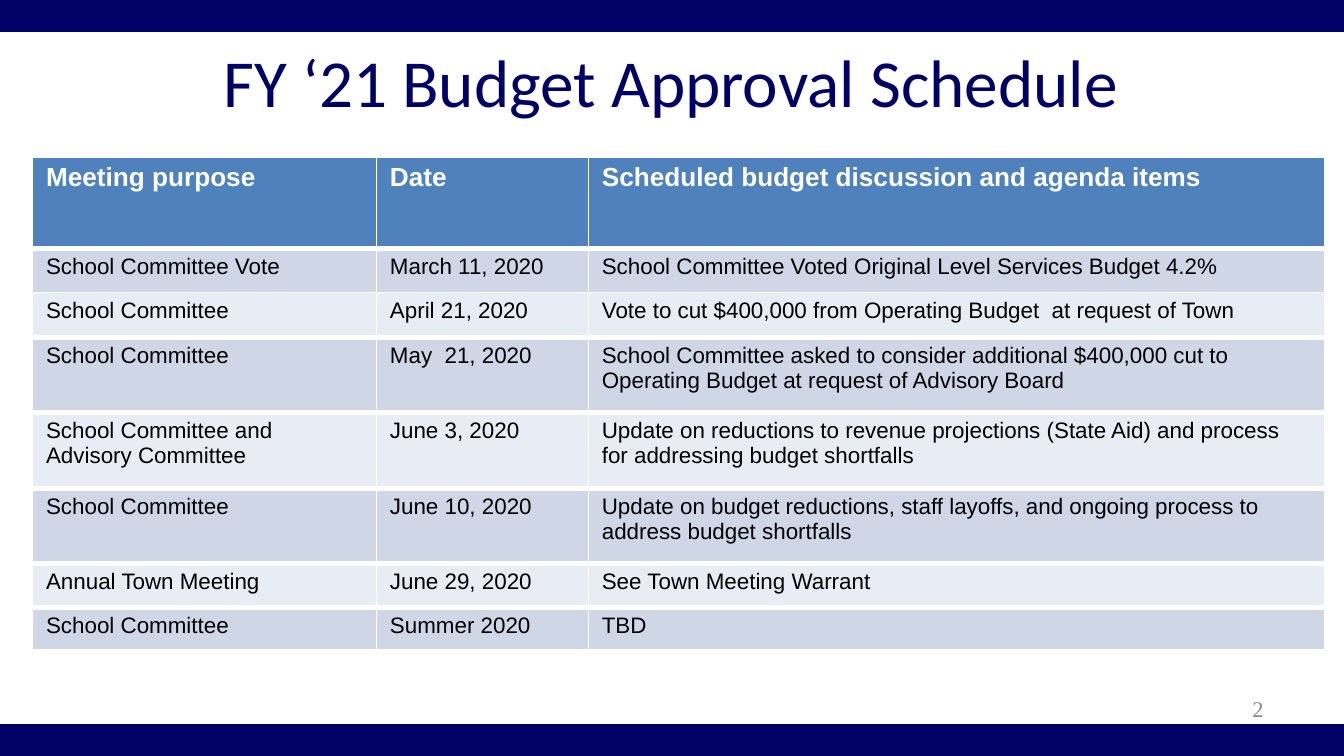
import pptx
import pptx.dml.color
import pptx.enum.shapes
import pptx.enum.text
import pptx.oxml
import pptx.oxml.ns
import pptx.util
from dataclasses import dataclass

Pt = pptx.util.Pt
ALIGN = pptx.enum.text.PP_ALIGN
MIDDLE = pptx.enum.text.MSO_ANCHOR.MIDDLE


@dataclass(frozen=True)
class Theme:
    navy: str = "000066"
    header: str = "4F81BD"
    bands: tuple = ("CFD7E7", "E8ECF4")
    white: str = "FFFFFF"
    black: str = "000000"
    grey: str = "888888"
    title_font: str = "Calibri"
    table_font: str = "Arial"
    number_font: str = "Times New Roman"
    title_size: float = 36
    header_size: float = 14
    body_size: float = 12


class SlideBuilder:
    """Holds the theme and the current slide, and adds elements to it."""

    def __init__(self, slide, theme):
        self.slide = slide
        self.theme = theme

    def color(self, value):
        return pptx.dml.color.RGBColor.from_string(value)

    def add_text(self, frame, text, font, size, color, bold=False, align=ALIGN.LEFT):
        frame.word_wrap = True
        paragraph = frame.paragraphs[0]
        paragraph.alignment = align
        run = paragraph.add_run()
        run.text = text
        run.font.name = font
        run.font.size = Pt(size)
        run.font.bold = bold
        run.font.color.rgb = self.color(color)

    def bar(self, top, width, height):
        band = self.slide.shapes.add_shape(
            pptx.enum.shapes.MSO_SHAPE.RECTANGLE, 0, Pt(top), Pt(width), Pt(height))
        band.shadow.inherit = False
        band.fill.solid()
        band.fill.fore_color.rgb = self.color(self.theme.navy)
        band.line.color.rgb = self.color(self.theme.navy)
        band.line.width = Pt(2)

    def title(self, text, left, top, width, height):
        heading = self.slide.shapes.title
        heading.left, heading.top = Pt(left), Pt(top)
        heading.width, heading.height = Pt(width), Pt(height)
        heading.text_frame.vertical_anchor = MIDDLE
        self.add_text(heading.text_frame, text, self.theme.title_font,
                      self.theme.title_size, self.theme.navy, align=ALIGN.CENTER)

    def page_number(self, text, left, top, width, height):
        number = self.slide.shapes.add_textbox(Pt(left), Pt(top), Pt(width), Pt(height))
        number.text_frame.vertical_anchor = MIDDLE
        self.add_text(number.text_frame, text, self.theme.number_font,
                      self.theme.body_size, self.theme.grey, align=ALIGN.RIGHT)

    def borders(self, cell, above, below):
        properties = cell._tc.get_or_add_tcPr()
        for side, width in (("L", 1), ("R", 1), ("T", above), ("B", below)):
            properties.append(pptx.oxml.parse_xml(
                f'<a:ln{side} {pptx.oxml.ns.nsdecls("a")} w="{Pt(width)}">'
                f'<a:solidFill><a:srgbClr val="{self.theme.white}"/></a:solidFill>'
                f'</a:ln{side}>'))

    def cell(self, cell, text, is_header, fill, above, below):
        cell.margin_top = cell.margin_bottom = Pt(3)
        self.borders(cell, above, below)
        cell.fill.solid()
        cell.fill.fore_color.rgb = self.color(fill)
        theme = self.theme
        size, color = ((theme.header_size, theme.white) if is_header
                       else (theme.body_size, theme.black))
        self.add_text(cell.text_frame, text, theme.table_font, size, color, is_header)

    def table(self, rows, left, top, widths, heights, rules):
        schedule = self.slide.shapes.add_table(
            len(rows), len(widths), Pt(left), Pt(top),
            Pt(sum(widths)), Pt(sum(heights))).table
        schedule.horz_banding = False
        for column, width in zip(schedule.columns, widths):
            column.width = Pt(width)
        for index, (texts, height) in enumerate(zip(rows, heights)):
            schedule.rows[index].height = Pt(height)
            is_header = index == 0
            fill = self.theme.header if is_header else self.theme.bands[(index - 1) % 2]
            for position, text in enumerate(texts):
                self.cell(schedule.cell(index, position), text, is_header, fill,
                          rules[index], rules[index + 1])


MEETINGS = [
    ("Meeting purpose", "Date", "Scheduled budget discussion and agenda items"),
    ("School Committee Vote", "March 11, 2020",
     "School Committee Voted Original Level Services Budget 4.2%"),
    ("School Committee", "April 21, 2020",
     "Vote to cut $400,000 from Operating Budget  at request of Town"),
    ("School Committee", "May  21, 2020",
     "School Committee asked to consider additional $400,000 cut to "
     "Operating Budget at request of Advisory Board"),
    ("School Committee and Advisory Committee", "June 3, 2020",
     "Update on reductions to revenue projections (State Aid) and process "
     "for addressing budget shortfalls"),
    ("School Committee", "June 10, 2020",
     "Update on budget reductions, staff layoffs, and ongoing process to "
     "address budget shortfalls"),
    ("Annual Town Meeting", "June 29, 2020", "See Town Meeting Warrant"),
    ("School Committee", "Summer 2020", "TBD"),
]


def main():
    width, height, bar_height = 720, 405, 16
    presentation = pptx.Presentation()
    presentation.slide_width, presentation.slide_height = Pt(width), Pt(height)
    slide = presentation.slides.add_slide(presentation.slide_layouts[5])
    builder = SlideBuilder(slide, Theme())
    for top in (0, height - bar_height):
        builder.bar(top, width, bar_height)
    builder.title("FY ‘21 Budget Approval Schedule", 34.5, 18, 650, 50)
    builder.table(MEETINGS, 17.5, 84.25,
                  widths=(184.25, 113.5, 394.5),
                  heights=(48.75, 23.75, 24, 40.5, 40.5, 40.5, 23.5, 23.5),
                  rules=(1, 3, 1, 3, 3, 3, 3, 3, 3))
    builder.page_number("2", 516, 369, 168, 21.5)
    presentation.save("out.pptx")


if __name__ == "__main__":
    main()
